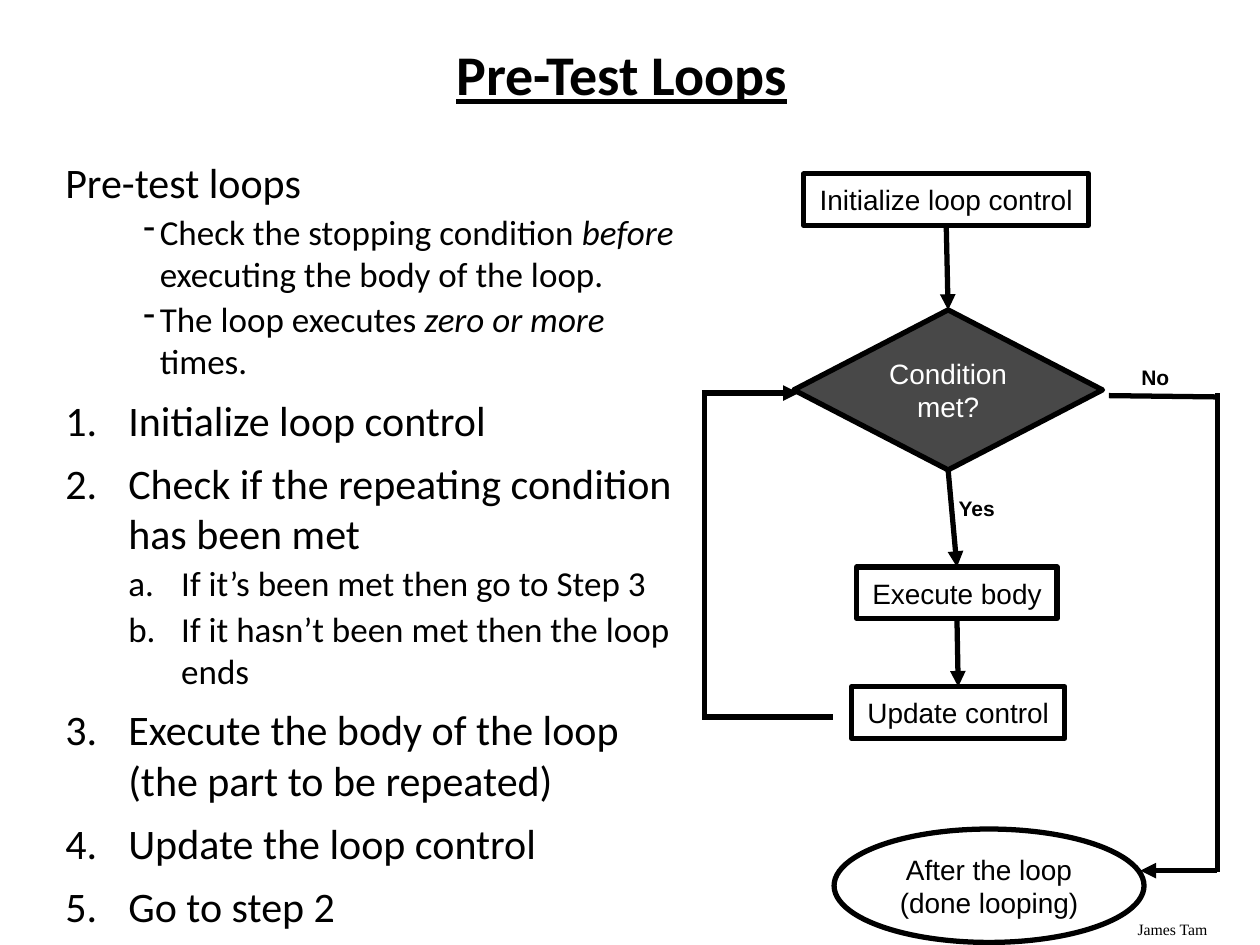
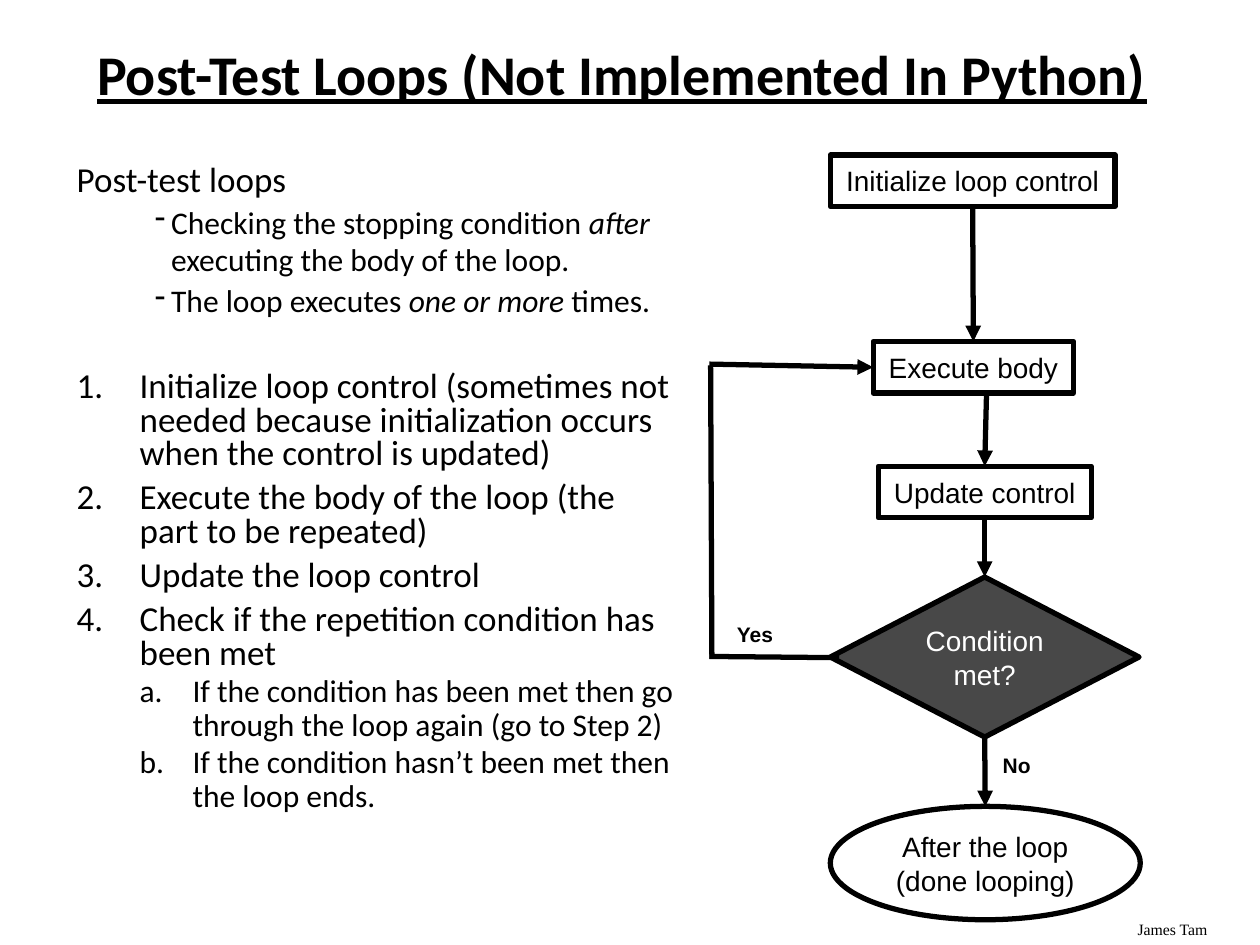
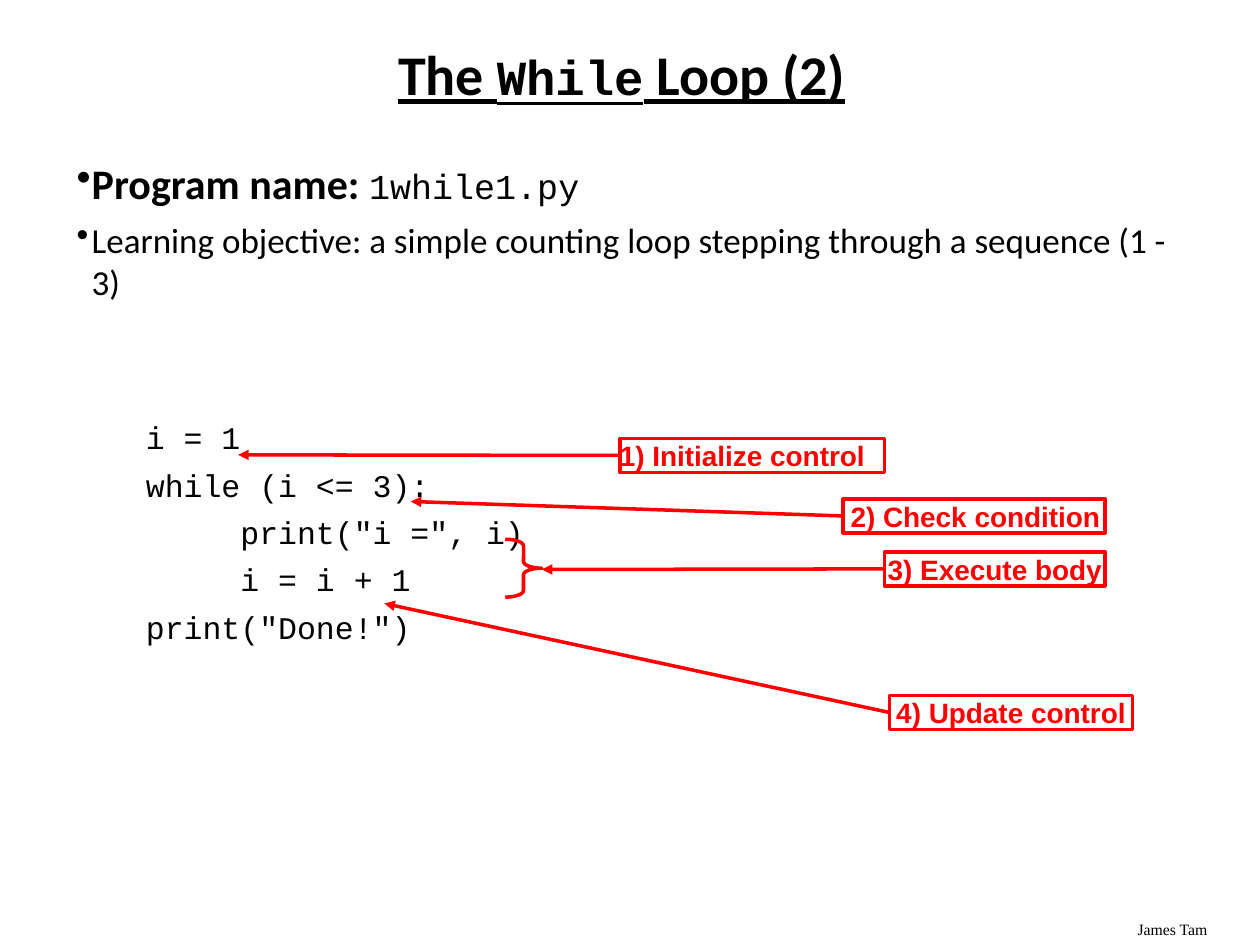
from lxml.etree import SubElement
from pptx import Presentation
from pptx.dml.color import RGBColor
from pptx.enum.shapes import MSO_CONNECTOR, MSO_SHAPE
from pptx.enum.text import MSO_ANCHOR, MSO_AUTO_SIZE, PP_ALIGN
from pptx.oxml.ns import qn
from pptx.util import Inches, Pt

# Shared look
BLACK, WHITE, GREY, RED = "000000", "FFFFFF", "484848", "FF0000"
BODY, CODE, CHART, SMALL = "Calibri", "Courier New", "Arial", "Times New Roman"
TOP, LEFT, BOTTOM = 0, 1, 2

# Paragraph styles: level, left margin, indent, space before (share of size), bullet
STYLES = {
    "lead": (0, 0, 0, 0.3, None),
    "dash": (1, 0.75, -0.13, 0.1, ("a:buChar", "char", "-")),
    "step": (0, 0.5, -0.5, 0.3, ("a:buAutoNum", "type", "arabicPeriod")),
    "substep": (1, 0.92, -0.42, 0.1, ("a:buAutoNum", "type", "alphaLcPeriod")),
    "point": (0, 0.12, -0.12, 0.3, ("a:buChar", "char", "•")),
    "code": (1, 0.55, 0, 0.3, None),
    "nested": (1, 1.3, 0, 0.3, None),
}


def add_run(paragraph, text, size, marks="", font=BODY, color=BLACK):
    """Add one run; marks holds b, i and u for bold, italic and underline."""
    run = paragraph.add_run()
    run.text = text
    run.font.size, run.font.name = Pt(size), font
    run.font.bold, run.font.italic, run.font.underline = (m in marks for m in "biu")
    run.font.color.rgb = RGBColor.from_string(color)


def add_line(slide, start, end, color=BLACK, width=3, arrow=True):
    """Join two ends, each a point or a (shape, side) pair."""
    x1, y1, x2, y2 = (0 if hasattr(v, "shape_type") else Inches(v) for v in (*start, *end))
    line = slide.shapes.add_connector(MSO_CONNECTOR.STRAIGHT, x1, y1, x2, y2)
    if hasattr(start[0], "shape_type"):
        line.begin_connect(*start)
    if hasattr(end[0], "shape_type"):
        line.end_connect(*end)
    line.line.color.rgb = RGBColor.from_string(color)
    line.line.width = Pt(width)
    if arrow:
        SubElement(line.line._get_or_add_ln(), qn("a:tailEnd"), type="triangle")
    SubElement(line._element.spPr, qn("a:effectLst"))


# Titles and body text: title runs, body place, paragraphs
# A paragraph is style, line spacing, extra space before in points, runs
lessons = [
    ([("Pre-Test Loops", 32, "bu")], (0.42, 1.19, 5.07, 5.87), [
        ("lead", 1, 0, [("Pre-test loops", 24)]),
        ("dash", 1, 0, [("Check the stopping condition ", 20), ("before", 20, "i"),
                        (" executing the body of the loop.", 20)]),
        ("dash", 1, 0, [("The loop executes ", 20), ("zero or more", 20, "i"),
                        (" times.", 20)]),
        ("step", 1, 0, [("Initialize loop control", 24)]),
        ("step", 1, 0, [("Check if the repeating condition has been met", 24)]),
        ("substep", 1, 0, [("If it’s been met then go to Step 3", 20)]),
        ("substep", 1, 0, [("If it hasn’t been met then the loop ends", 20)]),
        ("step", 1, 0, [("Execute the body of the loop (the part to be repeated)", 24)]),
        ("step", 1, 0, [("Update the loop control", 24)]),
        ("step", 1, 0, [("Go to step 2", 24)]),
    ]),
    ([("Post-Test Loops (Not Implemented In Python)", 32, "bu")], (0.51, 1.2, 4.99, 5.87), [
        ("lead", 1, 0, [("Post-test loops", 20)]),
        ("dash", 1, 0, [("Checking the stopping condition ", 18), ("after", 18, "i"),
                        (" executing the body of the loop.", 18)]),
        ("dash", 1, 0, [("The loop executes ", 18), ("one or more", 18, "i"),
                        (" times.", 18)]),
        ("step", 0.8, 24, [("Initialize loop control (sometimes not needed because "
                            "initialization occurs when the control is updated)", 20)]),
        ("step", 0.8, 0, [("Execute the body of the loop (the part to be repeated)", 20)]),
        ("step", 0.8, 0, [("Update the loop control", 20)]),
        ("step", 0.8, 0, [("Check if the repetition condition has been met", 20)]),
        ("substep", 0.9, 0, [("If the condition has been met then go through the loop "
                              "again (go to Step 2)", 18)]),
        ("substep", 0.9, 0, [("If the condition hasn’t been met then the loop ends.", 18)]),
    ]),
    ([("The ", 32, "bu"), ("While", 28, "bu", CODE), (" Loop (2)", 32, "bu")],
     (0.51, 1.2, 8.94, 5.87), [
        ("point", 1, 0, [("Program name: ", 24, "b"), ("1while1.py", 20, "", CODE)]),
        ("point", 1, 0, [("Learning objective: a simple counting loop stepping through "
                          "a sequence (1 - 3)", 20)]),
        ("code", 1, 61, [("i = 1", 18, "", CODE)]),
        ("code", 1, 0, [("while (i <= 3):", 18, "", CODE)]),
        ("nested", 1, 0, [('print("i =", i)', 18, "", CODE)]),
        ("nested", 1, 0, [("i = i + 1", 18, "", CODE)]),
        ("code", 1, 0, [('print("Done!")', 18, "", CODE)]),
    ]),
]

deck = Presentation()
deck.slide_width, deck.slide_height = Inches(10), Inches(7.5)
title_only = deck.slide_layouts[5]

for title_runs, body_place, paragraphs in lessons:
    slide = deck.slides.add_slide(title_only)
    title = slide.shapes.title
    title.left, title.top, title.width, title.height = map(Inches, (0.47, 0.33, 8.93, 0.57))
    title.text_frame.auto_size = MSO_AUTO_SIZE.NONE
    title.text_frame.vertical_anchor = MSO_ANCHOR.MIDDLE
    heading = title.text_frame.paragraphs[0]
    heading.alignment, heading.line_spacing = PP_ALIGN.CENTER, 0.9
    for run in title_runs:
        add_run(heading, *run)

    body = slide.shapes.add_textbox(*map(Inches, body_place)).text_frame
    body.word_wrap = True
    for number, (style, spacing, gap, runs) in enumerate(paragraphs):
        paragraph = body.add_paragraph() if number else body.paragraphs[0]
        level, margin, indent, before, bullet = STYLES[style]
        paragraph.level, paragraph.line_spacing = level, spacing
        paragraph.space_before = Pt(round(before * runs[0][1] + gap, 1))
        properties = paragraph._p.get_or_add_pPr()
        properties.set("marL", str(Inches(margin)))
        properties.set("indent", str(Inches(indent)))
        if bullet:
            tag, key, value = bullet
            SubElement(properties, qn(tag)).set(key, value)
        for run in runs:
            add_run(paragraph, *run)

pre_test, post_test, while_loop = deck.slides

# Author line, kept on the shared layout
author = while_loop.shapes.add_textbox(Inches(8.93), Inches(7.25), Inches(1), Inches(0.25))
author.text_frame.word_wrap = True
add_run(author.text_frame.paragraphs[0], "James Tam", 9, "", SMALL)
title_only.shapes.element.append(author.element)

# Flowchart steps: wording, outline, size, fill, text colour
STEPS = {
    "start": ("Initialize loop control", MSO_SHAPE.RECTANGLE, 2.26, 0.41, None, BLACK),
    "execute": ("Execute body", MSO_SHAPE.RECTANGLE, 1.59, 0.41, None, BLACK),
    "update": ("Update control", MSO_SHAPE.RECTANGLE, 1.69, 0.41, None, BLACK),
    "test": ("Condition met?", MSO_SHAPE.DIAMOND, 2.45, 1.27, GREY, WHITE),
    "after": ("After the loop (done looping)", MSO_SHAPE.OVAL, 2.46, 0.9, None, BLACK),
}
# Each chart: slide, step places, branch labels, lines (start, end, arrow)
flowcharts = [
    (pre_test,
     {"start": (6.38, 1.38), "execute": (6.8, 4.5), "test": (6.3, 2.46),
      "update": (6.76, 5.45), "after": (6.62, 6.58)},
     [("No", 8.96, 2.84), ("Yes", 7.51, 3.88)],
     [(("start", BOTTOM), ("test", TOP), True),
      (("test", BOTTOM), ("execute", TOP), True),
      (("execute", BOTTOM), ("update", TOP), True),
      ((8.8, 3.14), (9.65, 3.15), False),
      ((9.66, 3.12), (9.66, 6.92), False),
      ((9.66, 6.91), (9.05, 6.91), True),
      ((6.61, 5.69), (5.57, 5.69), False),
      ((5.59, 5.69), (5.59, 3.13), False),
      ((5.57, 3.12), (6.34, 3.12), True)]),
    (post_test,
     {"start": (6.59, 1.23), "execute": (6.93, 2.71), "update": (6.97, 3.7),
      "test": (6.59, 4.58), "after": (6.59, 6.4)},
     [("Yes", 5.75, 4.88), ("No", 7.86, 5.92)],
     [(("start", BOTTOM), ("execute", TOP), True),
      ((7.83, 3.11), ("update", TOP), True),
      (("update", BOTTOM), ("test", TOP), True),
      (("test", BOTTOM), ("after", TOP), True),
      ((6.66, 5.22), (5.63, 5.21), False),
      ((5.65, 5.23), (5.64, 2.9), False),
      ((5.63, 2.89), ("execute", LEFT), True)]),
]

for slide, places, labels, lines in flowcharts:
    steps = {}
    for name, (left, top) in places.items():
        wording, outline, width, height, fill, color = STEPS[name]
        step = slide.shapes.add_shape(outline, *map(Inches, (left, top, width, height)))
        step.shadow.inherit = False
        if fill:
            step.fill.solid()
            step.fill.fore_color.rgb = RGBColor.from_string(fill)
        else:
            step.fill.background()
        step.line.color.rgb = RGBColor.from_string(BLACK)
        step.line.width = Pt(3)
        step.text_frame.word_wrap = outline != MSO_SHAPE.RECTANGLE
        step.text_frame.vertical_anchor = MSO_ANCHOR.MIDDLE
        step.text_frame.paragraphs[0].alignment = PP_ALIGN.CENTER
        add_run(step.text_frame.paragraphs[0], wording, 16, "", CHART, color)
        steps[name] = step
    for start, end, arrow in lines:
        start, end = ((steps.get(a, a), b) for a, b in (start, end))
        add_line(slide, start, end, arrow=arrow)
    for answer, left, top in labels:
        label = slide.shapes.add_textbox(*map(Inches, (left, top, 0.63, 0.31))).text_frame
        label.word_wrap = True
        label.paragraphs[0].space_before = Pt(6)
        add_run(label.paragraphs[0], answer, 12, "b", CHART)

# Callouts on the code: wording, left, top, width, left inset, alignment, arrow tip
callouts = [
    ("1) Initialize control", 4.92, 3.48, 2.1, 0, PP_ALIGN.LEFT, (1.89, 3.61)),
    ("2) Check condition", 6.69, 3.96, 2.08, 0.06, PP_ALIGN.LEFT, (3.26, 3.98)),
    ("3) Execute body", 7.02, 4.38, 1.75, 0, PP_ALIGN.CENTER, (4.3, 4.52)),
    ("4) Update control", 7.06, 5.52, 1.93, 0, PP_ALIGN.CENTER, (3.05, 4.79)),
]
for wording, left, top, width, inset, alignment, tip in callouts:
    callout = while_loop.shapes.add_shape(
        MSO_SHAPE.RECTANGLE, *map(Inches, (left, top, width, 0.27)))
    callout.shadow.inherit = False
    callout.fill.background()
    callout.line.color.rgb = RGBColor.from_string(RED)
    callout.line.width = Pt(2)
    frame = callout.text_frame
    frame.margin_left, frame.margin_right = Inches(inset), 0
    frame.margin_top = frame.margin_bottom = 0
    frame.vertical_anchor = MSO_ANCHOR.MIDDLE
    frame.paragraphs[0].alignment = alignment
    add_run(frame.paragraphs[0], wording, 16, "b", CHART, RED)
    add_line(while_loop, (callout, LEFT), tip, RED, 2)

# Brace around the loop body
brace = while_loop.shapes.add_shape(
    MSO_SHAPE.RIGHT_BRACE, *map(Inches, (4.01, 4.28, 0.29, 0.46)))
brace.shadow.inherit = False
brace.adjustments[0], brace.adjustments[1] = 0.18, 0.5
brace.fill.background()
brace.line.color.rgb = RGBColor.from_string(RED)
brace.line.width = Pt(2)

deck.save("out.pptx")
